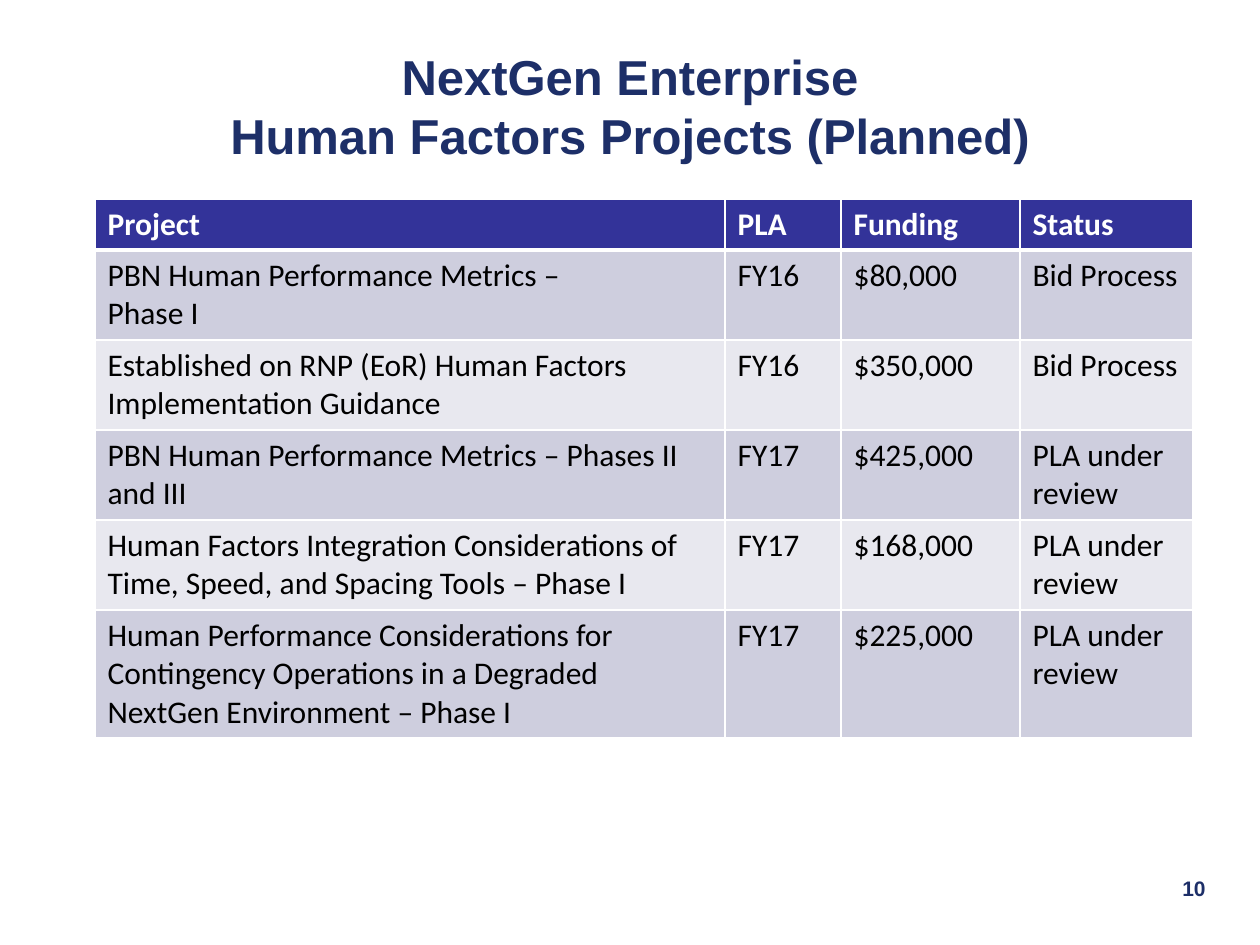
from lxml.etree import SubElement
from pptx import Presentation
from pptx.dml.color import RGBColor
from pptx.enum.text import MSO_ANCHOR as Anchor, PP_ALIGN as Align
from pptx.oxml.ns import qn
from pptx.util import Emu, Pt

NAVY = RGBColor(0x1D, 0x2F, 0x68)
INDIGO = RGBColor(0x33, 0x33, 0x99)
LILAC = RGBColor(0xCE, 0xCE, 0xDE)
PALE = RGBColor(0xE8, 0xE8, 0xEF)
WHITE = RGBColor(0xFF, 0xFF, 0xFF)
BLACK = RGBColor(0x00, 0x00, 0x00)

PX = 914400 / 126
COLUMN_WIDTHS = [630, 116, 179, 173]
ROW_HEIGHTS = [51, 90, 90, 90, 90, 128]
ROWS = [
    ["Project", "PLA", "Funding", "Status"],
    ["PBN Human Performance Metrics –\nPhase I", "FY16", "$80,000", "Bid Process"],
    ["Established on RNP (EoR) Human Factors Implementation Guidance",
     "FY16", "$350,000", "Bid Process"],
    ["PBN Human Performance Metrics – Phases II and III",
     "FY17", "$425,000", "PLA under review"],
    ["Human Factors Integration Considerations of Time, Speed, and Spacing Tools – Phase I",
     "FY17", "$168,000", "PLA under review"],
    ["Human Performance Considerations for Contingency Operations in a Degraded "
     "NextGen Environment – Phase I", "FY17", "$225,000", "PLA under review"],
]

presentation = Presentation()
presentation.slide_width = Emu(round(1260 * PX))
presentation.slide_height = Emu(round(945 * PX))
slide = presentation.slides.add_slide(presentation.slide_layouts[6])


def add_text(text, box, size, align, anchor):
    shape = slide.shapes.add_textbox(*[Emu(round(value * PX)) for value in box])
    frame = shape.text_frame
    frame.word_wrap = True
    frame.vertical_anchor = anchor
    frame.text = text
    paragraph = frame.paragraphs[0]
    paragraph.alignment = align
    for run in paragraph.runs:
        run.font.name = "Arial"
        run.font.size = Pt(size)
        run.font.bold = True
        run.font.color.rgb = NAVY


def add_border(cell, side, points):
    line = SubElement(cell._tc.get_or_add_tcPr(), qn(f"a:ln{side}"), w=str(Pt(points)))
    fill = SubElement(line, qn("a:solidFill"))
    SubElement(fill, qn("a:srgbClr"), val=str(WHITE))


# Page number
add_text("10", (956, 869, 262, 63), 12, Align.RIGHT, Anchor.TOP)

# Project table
frame = slide.shapes.add_table(
    len(ROWS), len(COLUMN_WIDTHS), Emu(round(95 * PX)), Emu(round(199 * PX)),
    Emu(round(sum(COLUMN_WIDTHS) * PX)), Emu(round(sum(ROW_HEIGHTS) * PX)))
table = frame.table
for column, width in zip(table.columns, COLUMN_WIDTHS):
    column.width = Emu(round(width * PX))
for row, height in zip(table.rows, ROW_HEIGHTS):
    row.height = Emu(round(height * PX))

for row_index, values in enumerate(ROWS):
    is_header = row_index == 0
    row_color = INDIGO if is_header else LILAC if row_index % 2 else PALE
    for column_index, value in enumerate(values):
        cell = table.cell(row_index, column_index)
        for side in "LRTB":
            thick = (is_header and side == "B") or (row_index == 1 and side == "T")
            add_border(cell, side, 3 if thick else 1)
        cell.fill.solid()
        cell.fill.fore_color.rgb = row_color
        cell.text_frame.text = value
        for paragraph in cell.text_frame.paragraphs:
            for run in paragraph.runs:
                run.font.name = "Calibri"
                run.font.size = Pt(18)
                run.font.bold = is_header
                run.font.color.rgb = WHITE if is_header else BLACK

# Title
add_text("NextGen Enterprise\vHuman Factors Projects (Planned)",
         (0, 63, 1260, 84), 28, Align.CENTER, Anchor.MIDDLE)

presentation.save("out.pptx")
